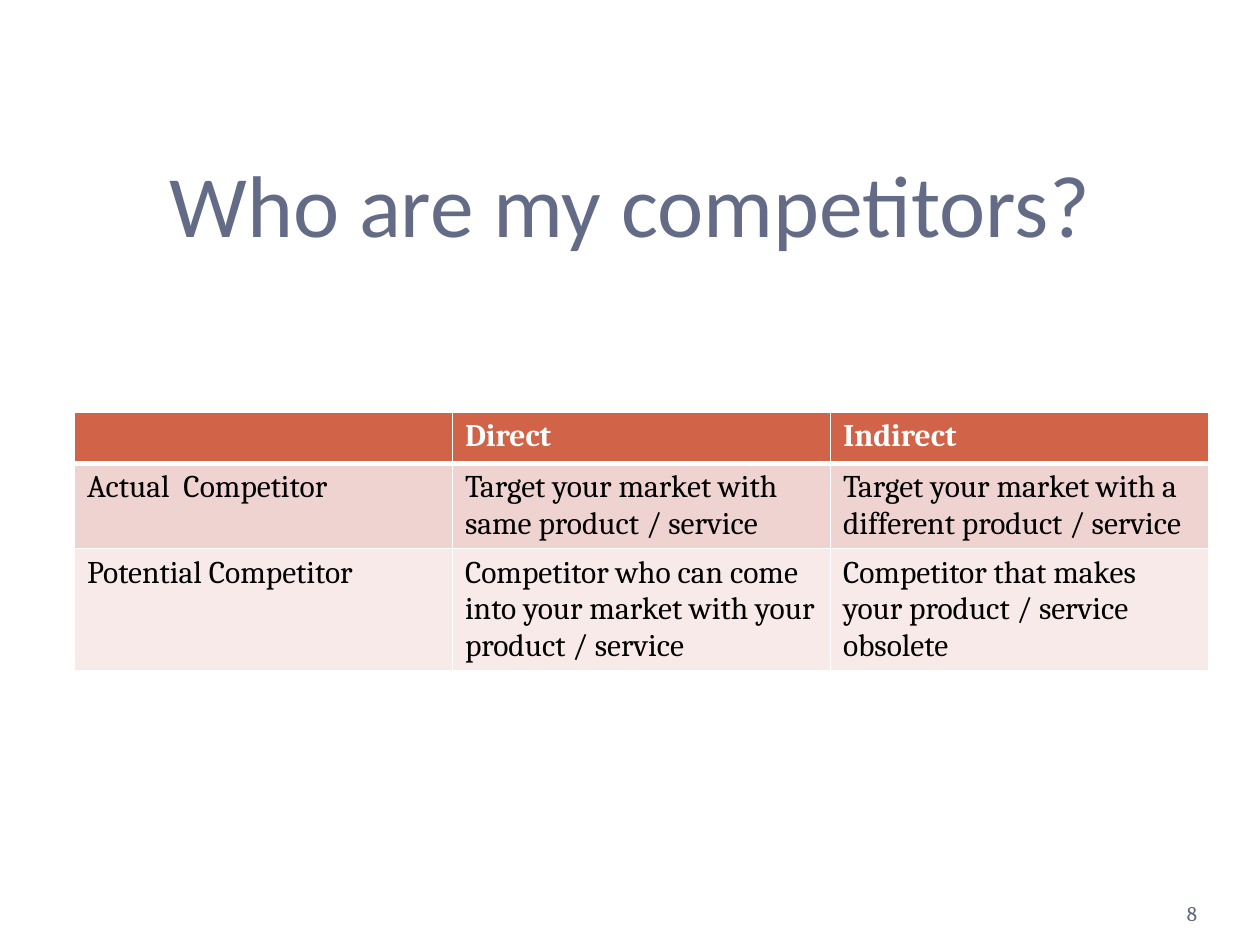
from lxml.etree import SubElement
from pptx import Presentation
from pptx.dml.color import RGBColor
from pptx.enum.text import MSO_ANCHOR, MSO_AUTO_SIZE, PP_ALIGN
from pptx.oxml.ns import qn
from pptx.util import Cm, Pt

WHITE = RGBColor(0xFF, 0xFF, 0xFF)
BLACK = RGBColor(0x00, 0x00, 0x00)
SLATE = RGBColor(0x64, 0x6B, 0x86)
GREY = RGBColor(0x60, 0x66, 0x80)
RUST = RGBColor(0xD1, 0x63, 0x49)
ROSE = RGBColor(0xEE, 0xD3, 0xD0)
BLUSH = RGBColor(0xF7, 0xEA, 0xE9)

ROWS = [
    ("", "Direct", "Indirect"),
    ("Actual  Competitor",
     "Target your market with same product / service",
     "Target your market with a different product / service"),
    ("Potential Competitor",
     "Competitor who can come into your market with your product / service",
     "Competitor that makes your product / service obsolete"),
]
FILLS = [RUST, ROSE, BLUSH]


def style(para, face, size, color, bold=False):
    """Set the font of a whole paragraph."""
    font = para.font
    font.name, font.size, font.bold = face, Pt(size), bold
    font.color.rgb = color


def put_text(shape, text, align, top=0):
    """Fill a bottom-anchored text shape and return its paragraph."""
    frame = shape.text_frame
    frame.word_wrap = True
    frame.auto_size = MSO_AUTO_SIZE.NONE
    frame.vertical_anchor = MSO_ANCHOR.BOTTOM
    frame.margin_left = frame.margin_right = frame.margin_bottom = 0
    frame.margin_top = Cm(top)
    frame.text = text
    para = frame.paragraphs[0]
    para.alignment = align
    return para


def add_title(slide, left, top, width, height):
    """Place the slide title in the given box."""
    title = slide.shapes.title
    title.left, title.top, title.width, title.height = left, top, width, height
    para = put_text(title, "Who are my competitors?", PP_ALIGN.CENTER, 0.13)
    style(para, "Calibri", 50, SLATE)


def edge(cell, side, width):
    """Draw one white cell border."""
    line = SubElement(cell._tc.get_or_add_tcPr(), qn(f"a:ln{side}"), w=str(Pt(width)))
    fill = SubElement(line, qn("a:solidFill"))
    SubElement(fill, qn("a:srgbClr"), val=str(WHITE))


def add_grid(slide, left, top, width, height):
    """Place the competitor table in the given box."""
    count = len(ROWS)
    frame = slide.shapes.add_table(count, len(ROWS[0]), left, top, width, height)
    table = frame.table
    for i, (row, shade) in enumerate(zip(ROWS, FILLS)):
        head = i == 0
        for j, text in enumerate(row):
            cell = table.cell(i, j)
            edge(cell, "L", 1)
            edge(cell, "R", 1)
            edge(cell, "T", 3 if i == 1 else 1)
            edge(cell, "B", 3 if head else 1)
            cell.fill.solid()
            cell.fill.fore_color.rgb = shade
            cell.text = text
            para = cell.text_frame.paragraphs[0]
            style(para, "Cambria", 18, WHITE if head else BLACK, head)


def add_number(slide, left, top, width, height):
    """Place the page number in the given box."""
    box = slide.shapes.add_textbox(left, top, width, height)
    style(put_text(box, "8", PP_ALIGN.RIGHT), "Cambria", 12, GREY)


def main():
    """Build the slide and save it."""
    deck = Presentation()
    deck.slide_width, deck.slide_height = Cm(25.4), Cm(19.05)
    slide = deck.slides.add_slide(deck.slide_layouts[5])
    add_title(slide, Cm(1.27), Cm(1.96), Cm(22.86), Cm(3.18))
    add_grid(slide, Cm(1.5), Cm(8.31), Cm(22.86), Cm(3.09))
    add_number(slide, Cm(22.02), Cm(17.65), Cm(2.11), Cm(1.02))
    deck.save("out.pptx")


if __name__ == "__main__":
    main()
